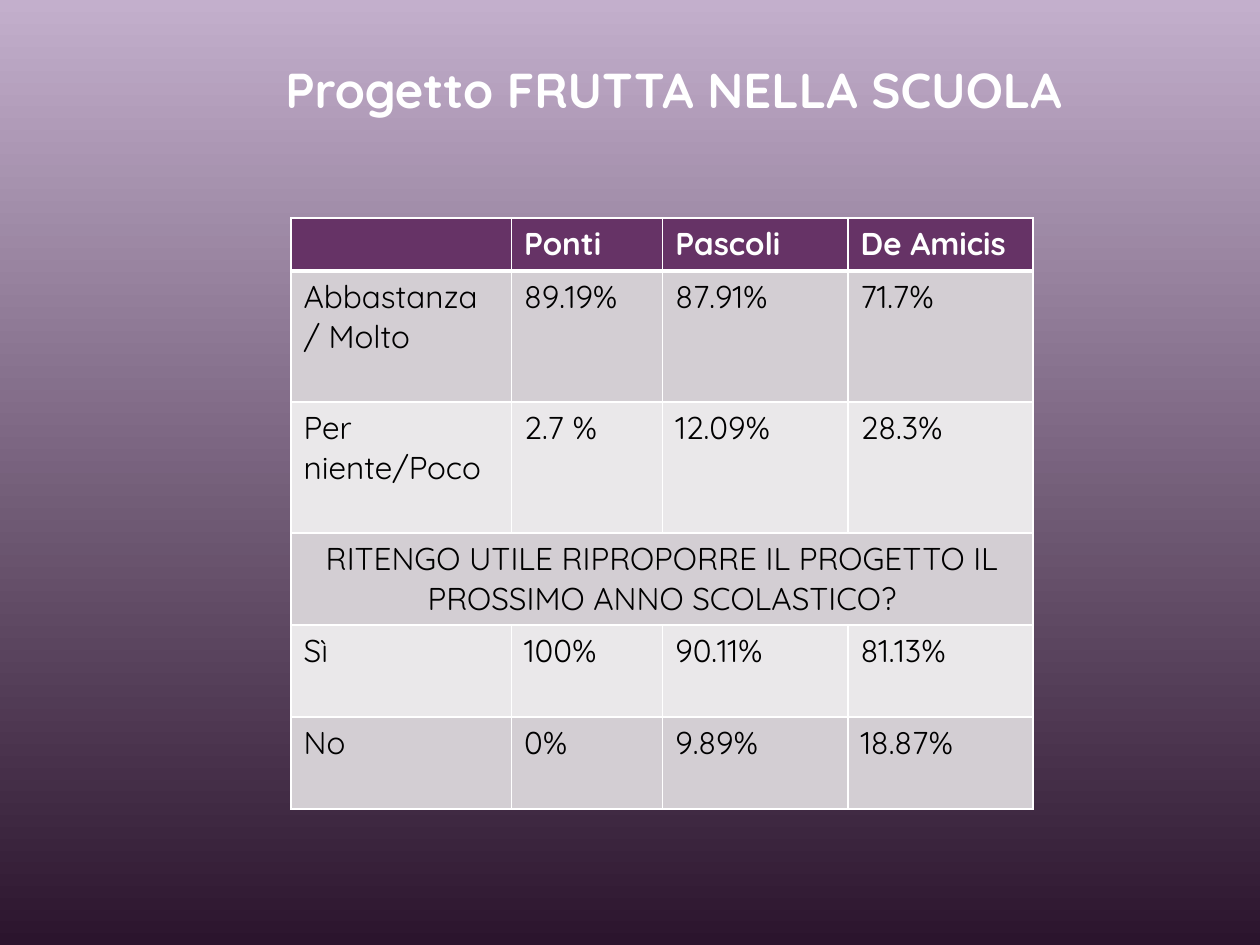
from dataclasses import dataclass

from lxml.etree import SubElement
from pptx import Presentation
from pptx.dml.color import RGBColor
from pptx.enum.text import MSO_ANCHOR as Anchor, PP_ALIGN as Align
from pptx.oxml.ns import qn
from pptx.slide import Slide
from pptx.util import Inches, Pt

WHITE = RGBColor(0xFF, 0xFF, 0xFF)
BLACK = RGBColor(0x00, 0x00, 0x00)
PURPLE = RGBColor(0x66, 0x33, 0x66)
DARK_BAND = RGBColor(0xD3, 0xCE, 0xD3)
LIGHT_BAND = RGBColor(0xEA, 0xE8, 0xEA)
SKY = RGBColor(0xC3, 0xAF, 0xCC)
NIGHT = RGBColor(0x2B, 0x14, 0x2D)

QUESTION = "RITENGO UTILE RIPROPORRE IL PROGETTO IL PROSSIMO ANNO SCOLASTICO?"
SURVEY = [
    ["", "Ponti", "Pascoli", "De Amicis"],
    ["Abbastanza / Molto", "89.19%", "87.91%", "71.7%"],
    ["Per niente/Poco", "2.7 %", "12.09%", "28.3%"],
    [QUESTION],
    ["Sì", "100%", "90.11%", "81.13%"],
    ["No", "0%", "9.89%", "18.87%"],
]
COLUMN_WIDTHS = [1.75, 1.2, 1.47, 1.47]
ROW_HEIGHTS = [0.42, 1.04, 1.04, 0.73, 0.73, 0.73]


def write(frame, text, *, font="Quicksand", size=18, color=BLACK, bold=False,
          align=Align.LEFT, spacing=None):
    paragraph = frame.paragraphs[0]
    paragraph.alignment = align
    paragraph.line_spacing = spacing
    paragraph.font.size = Pt(size)
    if text:
        run = paragraph.add_run()
        run.text = text
        run.font.name = font
        run.font.size = Pt(size)
        run.font.bold = bold
        run.font.color.rgb = color


def rule_cell(cell, top=1, bottom=1):
    properties = cell._tc.get_or_add_tcPr()
    for side, width in (("L", 1), ("R", 1), ("T", top), ("B", bottom)):
        line = SubElement(properties, qn(f"a:ln{side}"), w=str(Pt(width)))
        solid = SubElement(line, qn("a:solidFill"))
        SubElement(solid, qn("a:srgbClr"), val=str(WHITE))


@dataclass
class SlideBuilder:
    """Draws styled elements on the current slide."""

    slide: Slide
    font: str = "Quicksand"

    def background(self, start, end):
        fill = self.slide.background.fill
        fill.gradient()
        fill.gradient_angle = 270
        for stop, color in zip(fill.gradient_stops, (start, end)):
            stop.color.rgb = color

    def title(self, text, left, top, width, height):
        heading = self.slide.shapes.add_textbox(
            Inches(left), Inches(top), Inches(width), Inches(height))
        frame = heading.text_frame
        frame.word_wrap = True
        frame.vertical_anchor = Anchor.MIDDLE
        write(frame, text, font=self.font, size=28, color=WHITE, bold=True,
              align=Align.CENTER, spacing=0.95)

    def table(self, rows, widths, heights, left, top):
        survey = self.slide.shapes.add_table(
            len(rows), len(widths), Inches(left), Inches(top),
            Inches(sum(widths)), Inches(sum(heights))).table
        for column, width in zip(survey.columns, widths):
            column.width = Inches(width)
        for index, (row, height, texts) in enumerate(zip(survey.rows, heights, rows)):
            row.height = Inches(height)
            header = index == 0
            spanning = len(texts) == 1
            band = PURPLE if header else DARK_BAND if index % 2 else LIGHT_BAND
            if spanning:
                row.cells[0].merge(row.cells[len(widths) - 1])
            for cell in row.cells:
                rule_cell(cell, top=3 if index == 1 else 1, bottom=3 if header else 1)
                cell.fill.solid()
                cell.fill.fore_color.rgb = band
            for cell, text in zip(row.cells, texts):
                write(cell.text_frame, text, font=self.font, bold=header,
                      color=WHITE if header else BLACK,
                      align=Align.CENTER if spanning else Align.LEFT)


def main():
    deck = Presentation()
    deck.slide_width, deck.slide_height = Inches(10), Inches(7.5)
    builder = SlideBuilder(deck.slides.add_slide(deck.slide_layouts[6]))
    builder.background(SKY, NIGHT)
    builder.title("Progetto FRUTTA NELLA SCUOLA", 1.2, 0.1, 8.29, 1.25)
    builder.table(SURVEY, COLUMN_WIDTHS, ROW_HEIGHTS, 2.31, 1.73)
    deck.save("out.pptx")


if __name__ == "__main__":
    main()
